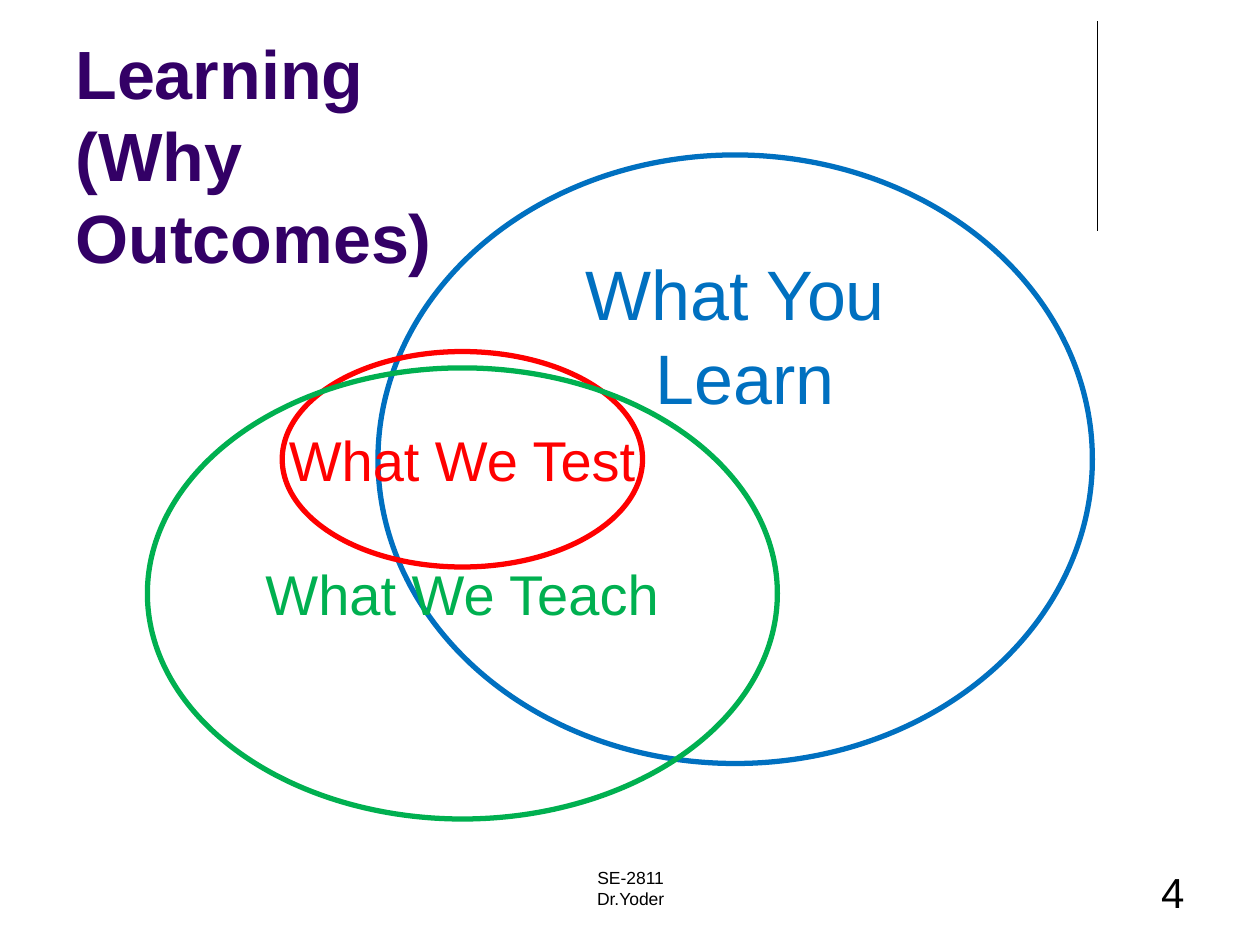
from pptx import Presentation
from pptx.dml.color import RGBColor
from pptx.enum.shapes import MSO_CONNECTOR, MSO_SHAPE
from pptx.enum.text import MSO_ANCHOR, PP_ALIGN
from pptx.oxml.ns import qn
from pptx.util import Inches, Pt

STRAIGHT = MSO_CONNECTOR.STRAIGHT
OVAL = MSO_SHAPE.OVAL
TOP, MIDDLE, BOTTOM = MSO_ANCHOR.TOP, MSO_ANCHOR.MIDDLE, MSO_ANCHOR.BOTTOM
LEFT, CENTER, RIGHT = PP_ALIGN.LEFT, PP_ALIGN.CENTER, PP_ALIGN.RIGHT

BLACK, PURPLE = "000000", "330066"
BLUE, RED, GREEN = "0070C0", "FF0000", "00B050"


def rgb(value):
    return RGBColor.from_string(value)


class SlideBuilder:
    font_name = "Arial"
    outline_width = 3
    rule_width = 0.75

    def __init__(self, slide):
        self.slide = slide

    def style(self, font, size, color, bold):
        font.name = self.font_name
        font.size = Pt(size)
        font.bold = bold
        font.color.rgb = rgb(color)

    def fill_text(self, frame, paragraphs, size, color, align, anchor, bold=False):
        frame.vertical_anchor = anchor
        for index, lines in enumerate(paragraphs):
            paragraph = frame.paragraphs[0] if index == 0 else frame.add_paragraph()
            paragraph.alignment = align
            for number, line in enumerate(lines.split("\n")):
                if number:
                    paragraph.add_line_break()
                run = paragraph.add_run()
                run.text = line
                self.style(run.font, size, color, bold)

    def text(self, box, paragraphs, size, color, align, anchor=TOP, bold=False):
        frame = self.slide.shapes.add_textbox(*map(Inches, box)).text_frame
        frame.word_wrap = True
        self.fill_text(frame, paragraphs, size, color, align, anchor, bold)

    def rule(self, x, top, bottom, color):
        ends = map(Inches, (x, top, x, bottom))
        rule = self.slide.shapes.add_connector(STRAIGHT, *ends)
        rule.line.color.rgb = rgb(color)
        rule.line.width = Pt(self.rule_width)
        properties = rule._element.spPr
        properties.append(properties.makeelement(qn("a:effectLst"), {}))

    def ellipse(self, box, paragraphs, size, color, anchor=MIDDLE):
        ellipse = self.slide.shapes.add_shape(OVAL, *map(Inches, box))
        ellipse.shadow.inherit = False
        ellipse.fill.background()
        ellipse.line.color.rgb = rgb(color)
        ellipse.line.width = Pt(self.outline_width)
        ellipse.text_frame.word_wrap = False
        self.fill_text(ellipse.text_frame, paragraphs, size, color, CENTER, anchor)


def main():
    deck = Presentation()
    deck.slide_width, deck.slide_height = Inches(10), Inches(7.5)
    builder = SlideBuilder(deck.slides.add_slide(deck.slide_layouts[6]))

    builder.rule(8.71, 0.17, 1.83, BLACK)
    builder.text((0.5, 0.83, 8.25, 1.42), ["Learning\n(Why\nOutcomes)"],
                 39, PURPLE, LEFT, BOTTOM, bold=True)
    builder.text((3.42, 6.83, 3.17, 0.5), ["SE-2811", "Dr.Yoder"], 10, BLACK, CENTER)
    builder.text((7.17, 6.83, 2.33, 0.5), ["4"], 24, BLACK, RIGHT)

    builder.ellipse((3, 1.23, 5.67, 4.83), ["What You", " Learn"], 40, BLUE, TOP)
    builder.ellipse((2.24, 2.79, 2.86, 1.71), ["What We Test"], 32, RED)
    builder.ellipse((1.17, 2.92, 5, 3.58), ["What We Teach"], 32, GREEN)

    deck.save("out.pptx")


if __name__ == "__main__":
    main()
